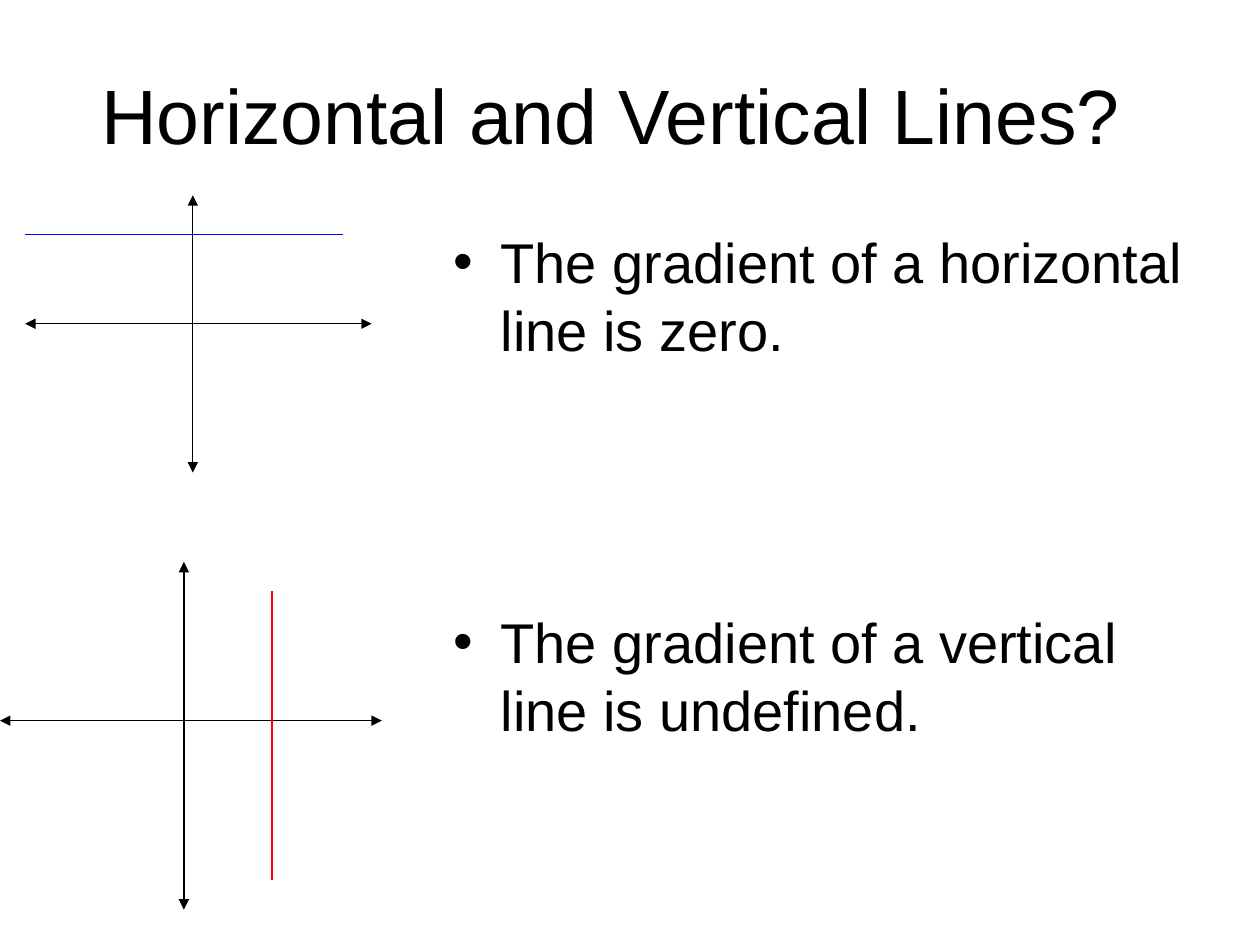
"""Build the slide on gradients of horizontal and vertical lines."""
from lxml import etree
from pptx import Presentation
from pptx.dml.color import RGBColor
from pptx.enum import shapes, text
from pptx.oxml import ns
from pptx.util import Pt

COLORS = {"ink": "000000", "horizontal": "0000FF", "vertical": "FF0000"}

deck = Presentation()
deck.slide_width, deck.slide_height = Pt(720), Pt(540)
slide = deck.slides.add_slide(deck.slide_layouts[6])


def add_text(box, paragraphs, size, anchor, formats):
    frame = slide.shapes.add_textbox(*map(Pt, box)).text_frame
    frame.word_wrap = True
    frame.vertical_anchor = anchor
    for index, words in enumerate(paragraphs):
        paragraph = frame.paragraphs[0] if index == 0 else frame.add_paragraph()
        paragraph.text = words
        for name, value in formats.items():
            setattr(paragraph, name, value)
        for name, value in {"name": "Arial", "size": Pt(size)}.items():
            setattr(paragraph.runs[0].font, name, value)
        paragraph.runs[0].font.color.rgb = RGBColor.from_string(COLORS["ink"])
    return frame


def add_line(start, end, color, arrows=False):
    line = slide.shapes.add_connector(
        shapes.MSO_CONNECTOR.STRAIGHT, *map(Pt, start + end))
    line.line.width = Pt(0.75)
    line.line.color.rgb = RGBColor.from_string(COLORS[color])
    properties = line._element.spPr
    etree.SubElement(properties, ns.qn("a:effectLst"))
    if arrows:
        for tip in ("a:headEnd", "a:tailEnd"):
            etree.SubElement(properties.find(ns.qn("a:ln")), ns.qn(tip), type="triangle")


add_text((25.2, 20.2, 648, 90), ["Horizontal and Vertical Lines?"], 44,
         text.MSO_ANCHOR.MIDDLE, {"alignment": text.PP_ALIGN.CENTER})

axes = [
    ((110.2, 111.6), (110.2, 270)),
    ((14.4, 185), (212.4, 185)),
    ((105.1, 321.1), (105.1, 519.8)),
    ((0, 411.8), (218.2, 411.8)),
]
for start, end in axes:
    add_line(start, end, "ink", arrows=True)
add_line((155.5, 337.7), (155.5, 502.6), "vertical")
add_line((14.4, 133.9), (195.8, 133.9), "horizontal")

statements = add_text(
    (252, 126, 432, 356.4),
    ["The gradient of a horizontal line is zero.",
     "The gradient of a vertical line is undefined."],
    32, text.MSO_ANCHOR.TOP, {"line_spacing": Pt(38.8)})
for statement in statements.paragraphs:
    layout = statement._p.get_or_add_pPr()
    for name, value in {"marL": Pt(27), "indent": Pt(-27)}.items():
        layout.set(name, str(value))
    etree.SubElement(layout, ns.qn("a:buFont"), typeface="Arial")
    etree.SubElement(layout, ns.qn("a:buChar"), char="•")
statements.paragraphs[1].space_before = Pt(139.5)

deck.save("out.pptx")
